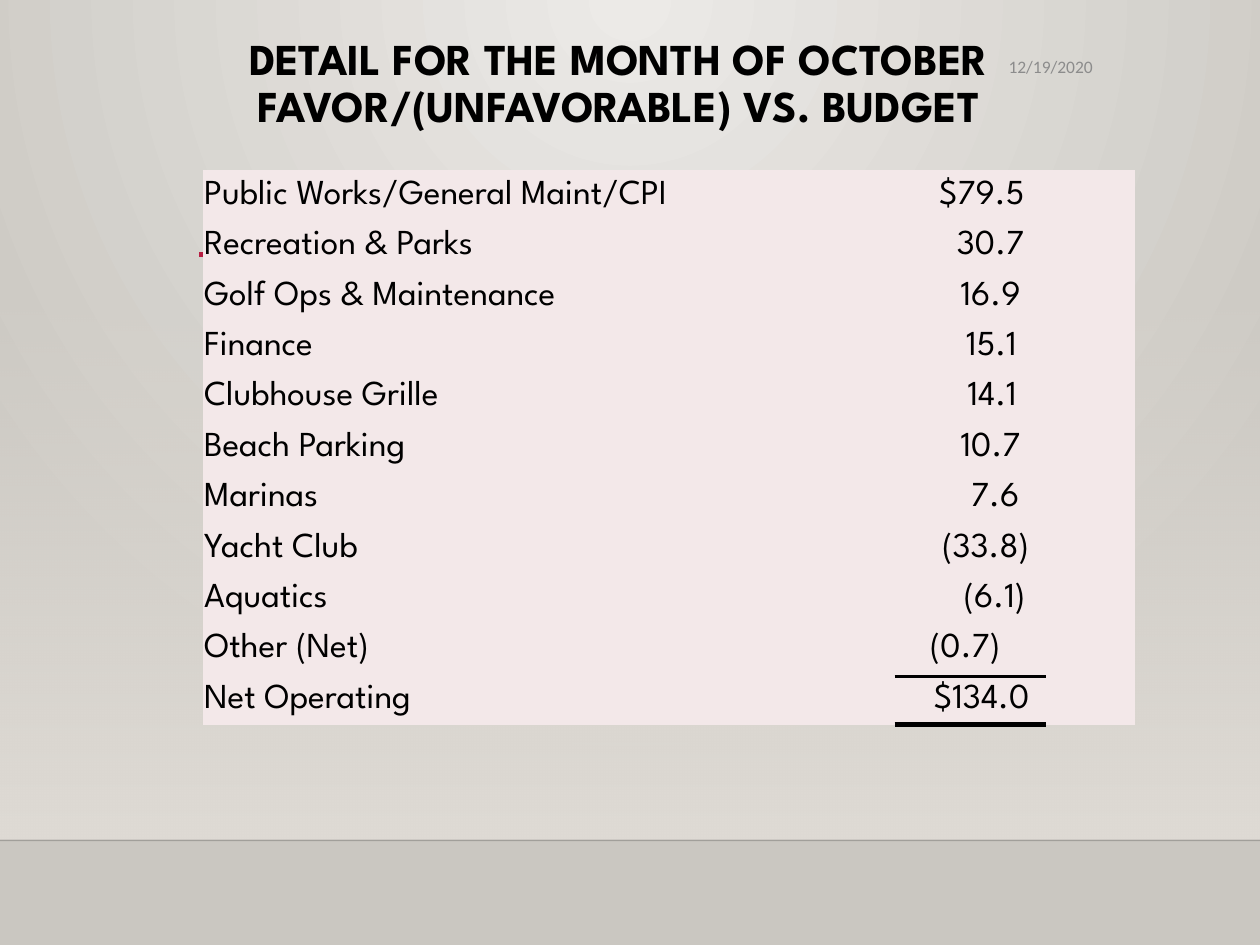
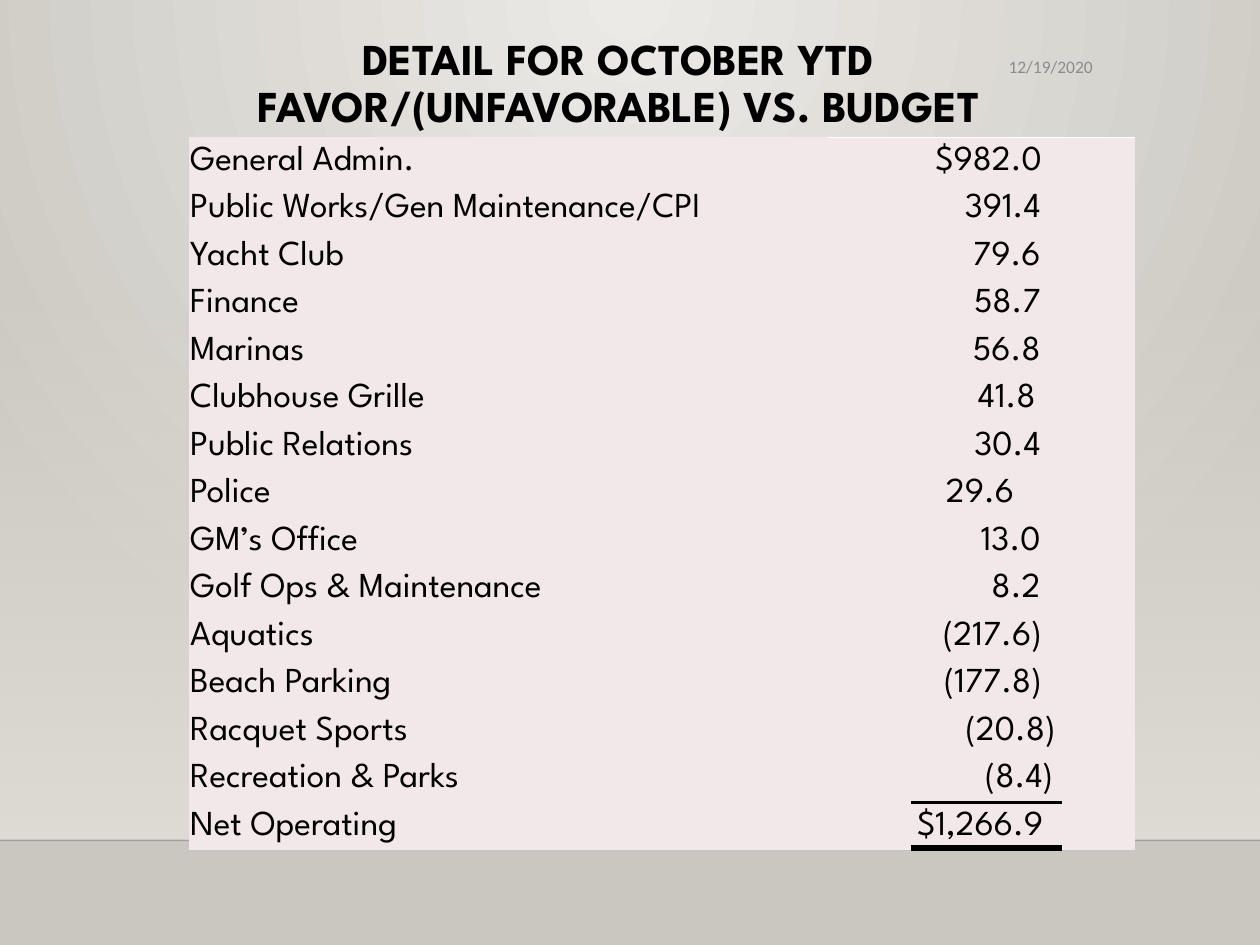
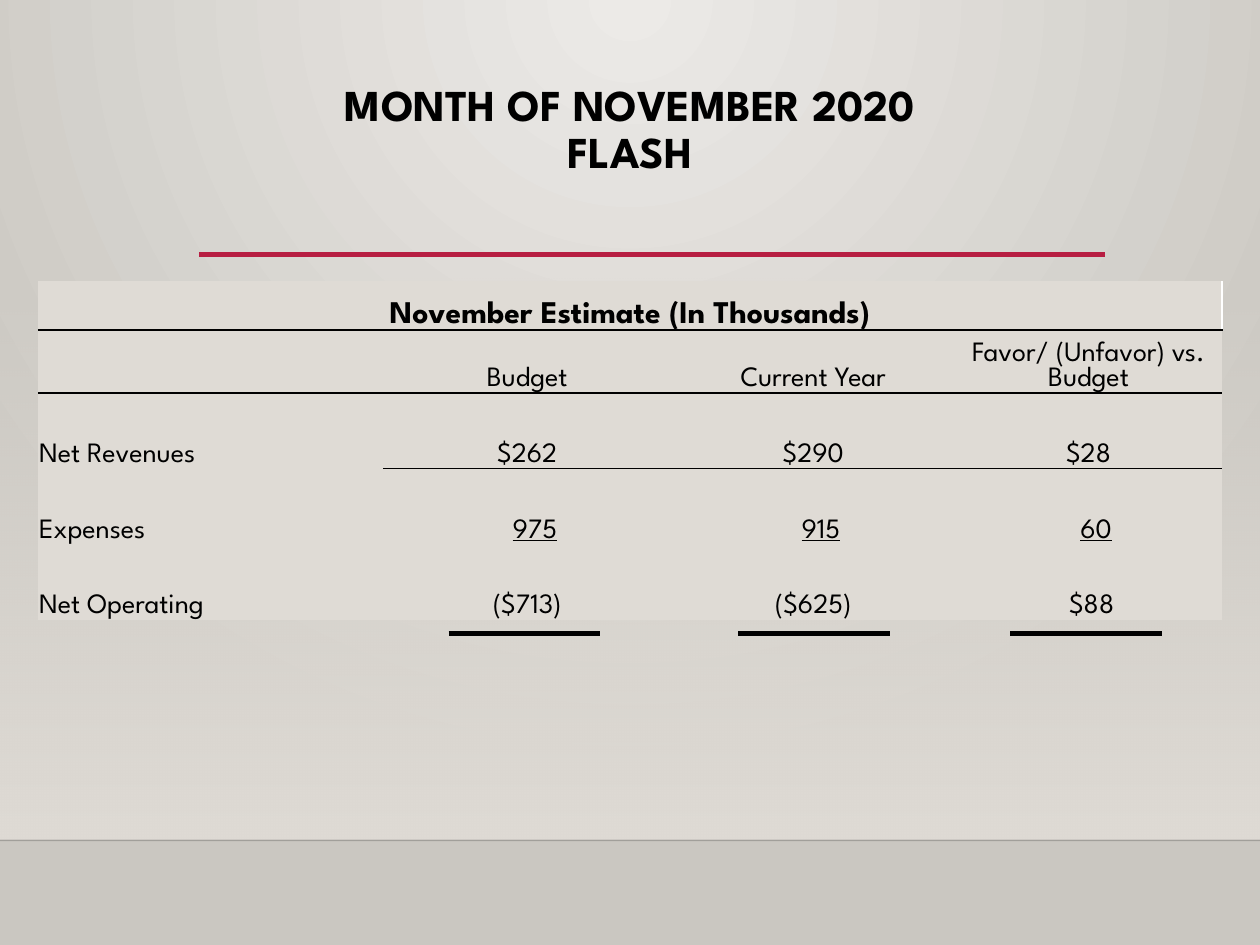
from dataclasses import dataclass

from lxml import etree
from pptx import Presentation
from pptx.dml.color import RGBColor
from pptx.enum.shapes import MSO_CONNECTOR, MSO_SHAPE
from pptx.enum.text import MSO_ANCHOR, MSO_AUTO_SIZE, PP_ALIGN
from pptx.oxml.ns import qn
from pptx.util import Emu, Inches, Pt

LEFT, MID, RIGHT = PP_ALIGN.LEFT, PP_ALIGN.CENTER, PP_ALIGN.RIGHT
TOP, CENTER, LOW = MSO_ANCHOR.TOP, MSO_ANCHOR.MIDDLE, MSO_ANCHOR.BOTTOM
RECT, LINE = MSO_SHAPE.RECTANGLE, MSO_CONNECTOR.STRAIGHT
PLAIN = "{2D5ABB26-0587-4C30-8999-92F81FD0307C}"
WIDE, HIGH = Inches(10), Inches(7.5)


@dataclass(frozen=True)
class Theme:
    font: str = "League Spartan"
    date_font: str = "Calibri"
    ink: str = "000000"
    gray: str = "8C8C8C"
    red: str = "B71E42"
    white: str = "FFFFFF"
    light: str = "ECEAE7"
    dark: str = "CAC7C1"
    sand: str = "DFDBD5"
    pink: str = "F3E8E9"
    title: float = 25.2
    pitch: float = 27
    row: float = 20
    head: float = 18
    cell: float = 16
    date: float = 10


T = Theme()

MONTH = [
    ("Public Works/General Maint/CPI", "$79.5", 0.88),
    ("Recreation & Parks", "30.7", 0.88),
    ("Golf Ops & Maintenance", "16.9", 0.91),
    ("Finance", "15.1", 0.94),
    ("Clubhouse Grille", "14.1", 0.94),
    ("Beach Parking", "10.7", 0.91),
    ("Marinas", "7.6", 0.92),
    ("Yacht Club", "(33.8)", 0.84),
    ("Aquatics", "(6.1)", 0.87),
    ("Other (Net)", "(0.7)", 1.07),
    ("Net Operating", "$134.0", 0.84),
]
YEAR = [
    ("General Admin.", "$982.0", 0.74),
    ("Public Works/Gen Maintenance/CPI", "391.4", 0.75),
    ("Yacht Club", "79.6", 0.75),
    ("Finance", "58.7", 0.75),
    ("Marinas", "56.8", 0.75),
    ("Clubhouse Grille", "41.8", 0.79),
    ("Public Relations", "30.4", 0.75),
    ("Police", "29.6", 0.96),
    ("GM’s Office", "13.0", 0.75),
    ("Golf Ops & Maintenance", "8.2", 0.75),
    ("Aquatics", "(217.6)", 0.74),
    ("Beach Parking", "(177.8)", 0.74),
    ("Racquet Sports", "(20.8)", 0.63),
    ("Recreation & Parks", "(8.4)", 0.65),
    ("Net Operating", "$1,266.9", 0.73),
]
FLASH = [
    ("November Estimate (In Thousands)", "", "", ""),
    ("", "Budget", "Current Year", "Favor/ (Unfavor) vs. Budget"),
    ("Net Revenues", "$262", "$290", "$28"),
    ("Expenses", "975", "915", "60"),
    ("Net Operating", "($713)", "($625)", "$88"),
]


def across(share):
    return Emu(round(WIDE * share / 100))


def down(share):
    return Emu(round(HIGH * share / 100))


def place(left, top, wide, high):
    """Turn shares of the slide, in percent, into lengths."""
    return across(left), down(top), across(wide), down(high)


def rgb(code):
    return RGBColor.from_string(code)


def write(frame, text, size=T.row, font=T.font, color=T.ink, bold=False,
          under=False, align=LEFT, pitch=None):
    para = frame.paragraphs[0]
    para.text = text
    para.alignment = align
    if pitch:
        para.line_spacing = Pt(pitch)
    for run in para.runs:
        face = run.font
        face.size, face.name, face.bold = Pt(size), font, bold
        face.underline = under
        face.color.rgb = rgb(color)


def fade(owner, fill, first, last):
    """Set a two-colour gradient and give back its XML element."""
    fill.gradient()
    for stop, code in zip(fill.gradient_stops, (first, last)):
        stop.color.rgb = rgb(code)
    return owner.find(".//" + qn("a:gradFill"))


def clear(node, share):
    """Set the opacity, in percent, of the first colour in node."""
    code = node.find(".//" + qn("a:srgbClr"))
    etree.SubElement(code, qn("a:alpha"), val=str(share * 1000))


def rule(slide, left, right, top, color=T.ink, width=3):
    line = slide.shapes.add_connector(
        LINE, across(left), down(top), across(right), down(top))
    line.line.color.rgb = rgb(color)
    line.line.width = Pt(width)
    etree.SubElement(line.element.spPr, qn("a:effectLst"))
    return line


def dress(master, slide):
    """Give the master its backdrop, band and rules, drawn on slide first."""
    back = fade(master.element, master.background.fill, T.light, T.dark)
    back.remove(back.find(qn("a:lin")))
    ring = etree.SubElement(back, qn("a:path"), path="circle")
    etree.SubElement(ring, qn("a:fillToRect"),
                     l="43000", t="0", r="43000", b="100000")

    band = slide.shapes.add_shape(RECT, *place(0, 29.33, 100, 59.47))
    band.shadow.inherit = False
    band.line.fill.background()
    clear(fade(band.element, band.fill, T.sand, T.sand), 0)
    band.fill.gradient_angle = 270
    floor = rule(slide, 0, 100, 88.93, width=1)
    clear(floor.element.spPr, 20)
    accent = rule(slide, 15.8, 87.7, 26.93, T.red, 2.5)
    tree = master.element.cSld.spTree
    for spot, item in enumerate((band, floor, accent), 2):
        tree.insert(spot, item.element)


def head(slide, text, box):
    title = slide.shapes.title
    title.left, title.top, title.width, title.height = place(*box)
    frame = title.text_frame
    frame.word_wrap = True
    frame.auto_size = MSO_AUTO_SIZE.NONE
    frame.vertical_anchor = TOP
    frame.margin_top = Inches(0.06)
    write(frame, text, size=T.title, bold=True, align=MID, pitch=T.pitch)


def stamp(slide):
    box = slide.shapes.add_textbox(*place(61.8, 4.8, 25.9, 4.53))
    frame = box.text_frame
    frame.word_wrap = True
    frame.vertical_anchor = CENTER
    write(frame, "12/19/2020", size=T.date, font=T.date_font,
          color=T.gray, align=RIGHT)


def grid(slide, box, cols, rows):
    """Add an unstyled table; cols and rows are relative sizes."""
    left, top, wide, high = place(*box)
    frame = slide.shapes.add_table(
        len(rows), len(cols), left, top, wide, high)
    frame.element.find(".//" + qn("a:tableStyleId")).text = PLAIN
    table = frame.table
    table.first_row = table.horz_banding = False
    for col, part in zip(table.columns, cols):
        col.width = Emu(round(wide * part / sum(cols)))
    for row, part in zip(table.rows, rows):
        row.height = Emu(round(high * part / sum(rows)))
    return table


def put(cell, text, fill, anchor=CENTER, lead=0.01, edge=0.01, **form):
    cell.fill.solid()
    cell.fill.fore_color.rgb = rgb(fill)
    cell.vertical_anchor = anchor
    cell.margin_left, cell.margin_right = Inches(lead), Inches(edge)
    cell.margin_top, cell.margin_bottom = Inches(0.01), 0
    write(cell.text_frame, text, **form)


def border(cell, **sides):
    """Draw 1 pt borders, with the sides R, T and B given in that order."""
    props = cell.fill and cell._tc.get_or_add_tcPr()
    for spot, (side, color) in enumerate(sides.items()):
        line = etree.Element(qn("a:ln" + side), w=str(Pt(1)))
        solid = etree.SubElement(line, qn("a:solidFill"))
        etree.SubElement(solid, qn("a:srgbClr"), val=color)
        props.insert(spot, line)


def detail(slide, text, data, box, cols, sums):
    """Build a list of amounts; sums holds the ends and heights of its rules."""
    head(slide, text, (8.1, 3.07, 82, 17.87))
    table = grid(slide, box, cols, [1] * len(data))
    for row, (label, value, edge) in enumerate(data):
        put(table.cell(row, 0), label, T.pink)
        put(table.cell(row, 1), value, T.pink, edge=edge, align=RIGHT)
    left, thin, thick = sums
    rule(slide, left, left + 12, thick)
    rule(slide, left, left + 12, thin, width=1.25)
    stamp(slide)
    return table


def flash(slide):
    head(slide, "MONTH OF NOVEMBER 2020\vFLASH", (9, 8, 82, 12.8))
    table = grid(slide, (3, 29.73, 94, 35.87),
                 (2.74, 2.29, 2.25, 2.12), (0.39, 0.5, 0.6, 0.6, 0.6))
    leads = {"975": 0.13, "915": 0.13, "60": 0.13, "$88": 0.06}
    for row, line in enumerate(FLASH):
        for col, text in enumerate(line):
            put(table.cell(row, col), text, T.sand, LOW,
                lead=leads.get(text, 0.01),
                size=T.cell if row else T.head, bold=row == 0,
                under=row == 3 and col > 0,
                align=MID if col or row == 0 else LEFT)
    table.cell(0, 0).merge(table.cell(0, 3))
    for col in range(4):
        ends = {"R": T.white} if col in (0, 3) else {}
        border(table.cell(0, col), **ends, B=T.ink)
        base = {"B": T.ink} if col else {}
        border(table.cell(1, col), T=T.ink, **base)
        if col:
            border(table.cell(2, col), T=T.ink)
    for left in (35.6, 58.6, 80.2):
        rule(slide, left, left + 12, 67.07)


def main():
    deck = Presentation()
    deck.slide_width, deck.slide_height = WIDE, HIGH
    month, year, final = (
        deck.slides.add_slide(deck.slide_layouts[5]) for _ in range(3))
    dress(deck.slide_master, month)
    detail(month,
           "DETAIL FOR THE MONTH OF OCTOBER\vFAVOR/(UNFAVORABLE) VS. BUDGET",
           MONTH, (16.1, 18, 74, 58.67), (4.97, 2.43), (71, 71.6, 76.67))
    table = detail(year,
                   "DETAIL FOR OCTOBER YTD\vFAVOR/(UNFAVORABLE) VS. BUDGET",
                   YEAR, (15, 14.53, 75.1, 75.47), (5.07, 2.44),
                   (72.3, 84.93, 89.73))
    border(table.cell(0, 1), T=T.white)
    flash(final)
    deck.save("out.pptx")


if __name__ == "__main__":
    main()
